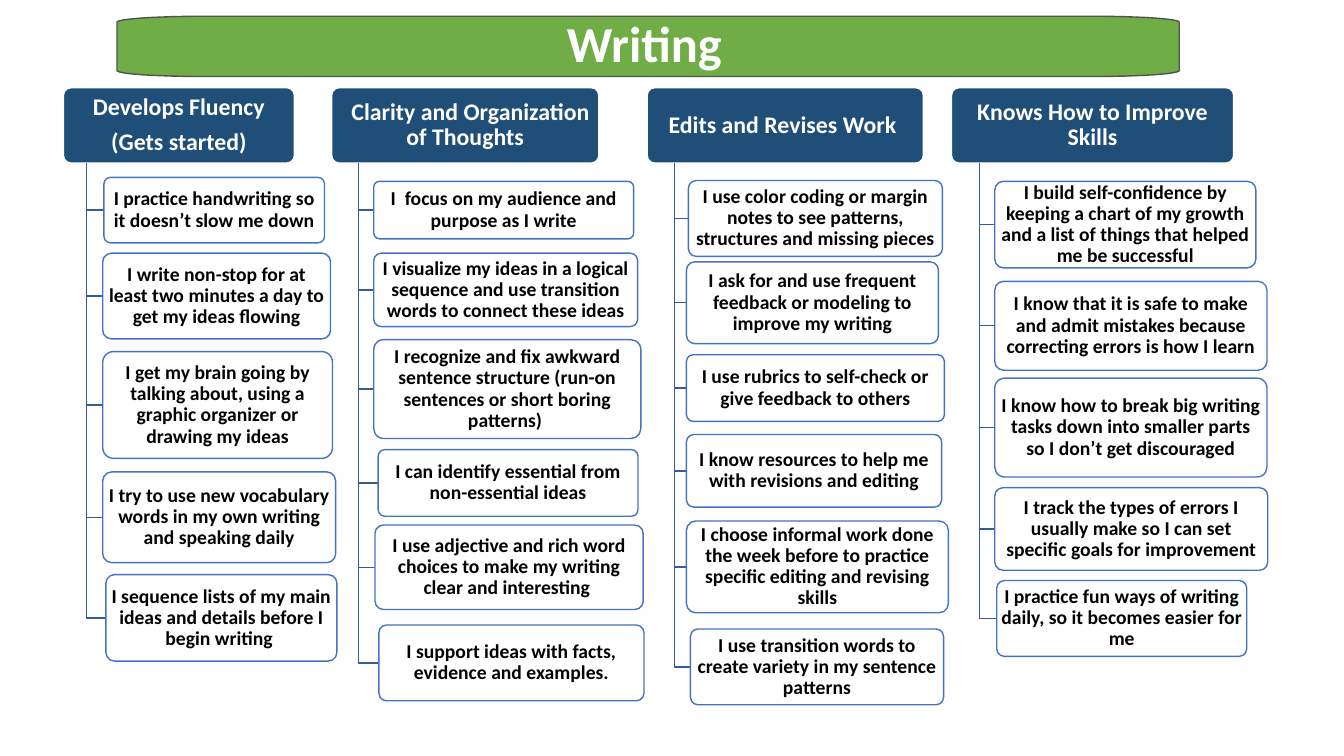
from math import cos, pi, sin

from lxml.etree import SubElement
from pptx import Presentation
from pptx.dml.color import RGBColor
from pptx.enum.shapes import MSO_SHAPE as SHAPE
from pptx.enum.text import MSO_ANCHOR as ANCHOR, PP_ALIGN as ALIGN
from pptx.oxml.ns import qn
from pptx.util import Cm, Pt

COLORS = {"banner": "70AD47", "banner_edge": "525252", "header": "1F4E79",
          "edge": "4472C4", "branch": "365B9D", "white": "FFFFFF", "black": "000000"}
HEADER_TOP, HEADER_H = 2.21, 1.9

# Columns: heading paragraphs, first-line indent, left, width,
# then the items as left, top, width, height, text (cm)
COLUMNS = [
    (["Develops Fluency", "(Gets started)"], 0, 1.6, 5.82, [
        (2.62, 4.47, 5.56, 1.65, "I practice handwriting so it doesn’t slow me down"),
        (2.59, 6.38, 5.74, 2.16,
         "I write non-stop for at least two minutes a day to get my ideas flowing"),
        (2.59, 8.86, 5.79, 2.69,
         "I get my brain going by talking about, using a graphic organizer or "
         "drawing my ideas"),
        (2.59, 11.89, 5.87, 2.29,
         "I try to use new vocabulary words in my own writing and speaking daily"),
        (2.67, 14.48, 5.82, 2.18,
         "I sequence lists of my main ideas and details before I begin writing "),
    ]),
    (["Clarity and Organization of Thoughts"], 0.27, 8.36, 6.73, [
        (9.42, 4.57, 6.55, 1.45, "I  focus on my audience and purpose as I write"),
        (9.42, 6.38, 6.65, 1.85,
         "I visualize my ideas in a logical sequence and use transition words to "
         "connect these ideas"),
        (9.42, 8.56, 6.73, 2.49,
         "I recognize and fix awkward sentence structure (run-on sentences or "
         "short boring patterns) "),
        (9.53, 11.33, 6.55, 1.68, "I can identify essential from non-essential ideas"),
        (9.45, 13.23, 6.76, 2.13,
         "I use adjective and rich word choices to make my writing clear and "
         "interesting "),
        (9.55, 15.75, 6.68, 1.91, "I support ideas with facts, evidence and examples."),
    ]),
    (["Edits and Revises Work "], 0, 16.31, 6.96, [
        (17.35, 4.55, 6.4, 1.91,
         "I use color coding or margin notes to see patterns, structures and "
         "missing pieces"),
        (17.3, 6.6, 6.35, 2.06,
         "I ask for and use frequent feedback or modeling to improve my writing"),
        (17.3, 8.94, 6.5, 1.68, "I use rubrics to self-check or give feedback to others"),
        (17.3, 10.95, 6.43, 1.83,
         "I know resources to help me with revisions and editing"),
        (17.3, 13.13, 6.6, 2.31,
         "I choose informal work done the week before to practice specific editing "
         "and revising skills"),
        (17.4, 15.85, 6.38, 1.91,
         "I use transition words to create variety in my sentence patterns"),
    ]),
    (["Knows How to Improve Skills"], 0, 23.98, 7.11, [
        (25.07, 4.57, 6.58, 2.18,
         "I build self-confidence by keeping a chart of my growth and a list of "
         "things that helped me be successful"),
        (25.07, 7.09, 6.86, 2.24,
         "I know that it is safe to make and admit mistakes because correcting "
         "errors is how I learn"),
        (25.07, 9.53, 6.86, 2.49,
         "I know how to break big writing tasks down into smaller parts so I don’t "
         "get discouraged"),
        (25.07, 12.29, 6.88, 2.08,
         "I track the types of errors I usually make so I can set specific goals "
         "for improvement"),
        (25.12, 14.63, 6.3, 1.91,
         "I practice fun ways of writing daily, so it becomes easier for me"),
    ]),
]


class Board:
    """Holds the slide and the shared style of its elements."""
    font = "Calibri"

    def __init__(self, slide):
        self.shapes = slide.shapes

    def paint(self, s, fill, line):
        s.shadow.inherit = False
        if fill:
            s.fill.solid()
            s.fill.fore_color.rgb = RGBColor.from_string(COLORS[fill])
        else:
            s.fill.background()
        s.line.color.rgb = RGBColor.from_string(COLORS[line])
        s.line.width = Pt(1)

    def label(self, s, text, size, color, margins):
        tf = s.text_frame
        tf.word_wrap = True
        tf.vertical_anchor = ANCHOR.MIDDLE
        tf.margin_left = tf.margin_right = Cm(margins[0])
        tf.margin_top = tf.margin_bottom = Cm(margins[1])
        tf.text = text
        for p in tf.paragraphs:
            p.alignment = ALIGN.CENTER
            p.line_spacing = 0.9
            p.space_after = Pt(6)
            for r in p.runs:
                r.font.name, r.font.size, r.font.bold = self.font, Pt(size), True
                r.font.color.rgb = RGBColor.from_string(COLORS[color])

    def outline(self, points, fill, line, close):
        points = [(Cm(x), Cm(y)) for x, y in points]
        builder = self.shapes.build_freeform(*points[0], scale=1.0)
        builder.add_line_segments(points[1:], close=close)
        s = builder.convert_to_shape()
        self.paint(s, fill, line)
        return s

    def banner(self, x, y, w, h, rx, ry, text):
        # Elliptical corners, clockwise from the right end of the bottom edge
        centers = [(x + w - rx, y + h - ry), (x + rx, y + h - ry),
                   (x + rx, y + ry), (x + w - rx, y + ry)]
        points = []
        for quarter, (cx, cy) in enumerate(centers):
            for step in range(13):
                a = (quarter + step / 12) * pi / 2
                points.append((cx + rx * cos(a), cy + ry * sin(a)))
        s = self.outline(points, "banner", "banner_edge", True)
        self.label(s, text, 36, "white", (0.13, 0.13))
        r = s.text_frame.paragraphs[0].add_run()
        r.text = " "
        r.font.name, r.font.size = self.font, Pt(24)

    def box(self, x, y, w, h, fill, line):
        s = self.shapes.add_shape(SHAPE.ROUNDED_RECTANGLE, Cm(x), Cm(y), Cm(w), Cm(h))
        s.adjustments[0] = 0.1
        self.paint(s, fill, line)
        return s

    def header(self, x, w, lines, indent):
        s = self.box(x, HEADER_TOP, w, HEADER_H, "header", "white")
        self.label(s, "\n".join(lines), 17, "white", (0.09, 0.06))
        if indent:
            s.text_frame.paragraphs[0]._p.get_or_add_pPr().set("indent", str(Cm(indent)))

    def item(self, x, y, w, h, text):
        s = self.box(x, y, w, h, "white", "edge")
        color = s._element.spPr.find(qn("a:solidFill")).find(qn("a:srgbClr"))
        SubElement(color, qn("a:alpha")).set("val", "90000")
        self.label(s, text, 14, "black", (0.06, 0.05))

    def branch(self, spine, x, y):
        top = HEADER_TOP + HEADER_H
        self.outline([(spine, top), (spine, y), (x, y)], None, "branch", False)


def main():
    prs = Presentation()
    prs.slide_width, prs.slide_height = Cm(33.87), Cm(19.05)
    board = Board(prs.slides.add_slide(prs.slide_layouts[6]))

    # Four headed columns, each item hanging from a spine
    for lines, indent, left, width, items in COLUMNS:
        board.header(left, width, lines, indent)
        for x, y, w, h, text in items:
            board.branch(left + width / 10, x, y + h / 2)
            board.item(x, y, w, h, text)

    # Title banner
    board.banner(2.95, 0.41, 26.77, 1.52, 2.24, 0.15, "Writing")

    prs.save("out.pptx")


if __name__ == "__main__":
    main()
